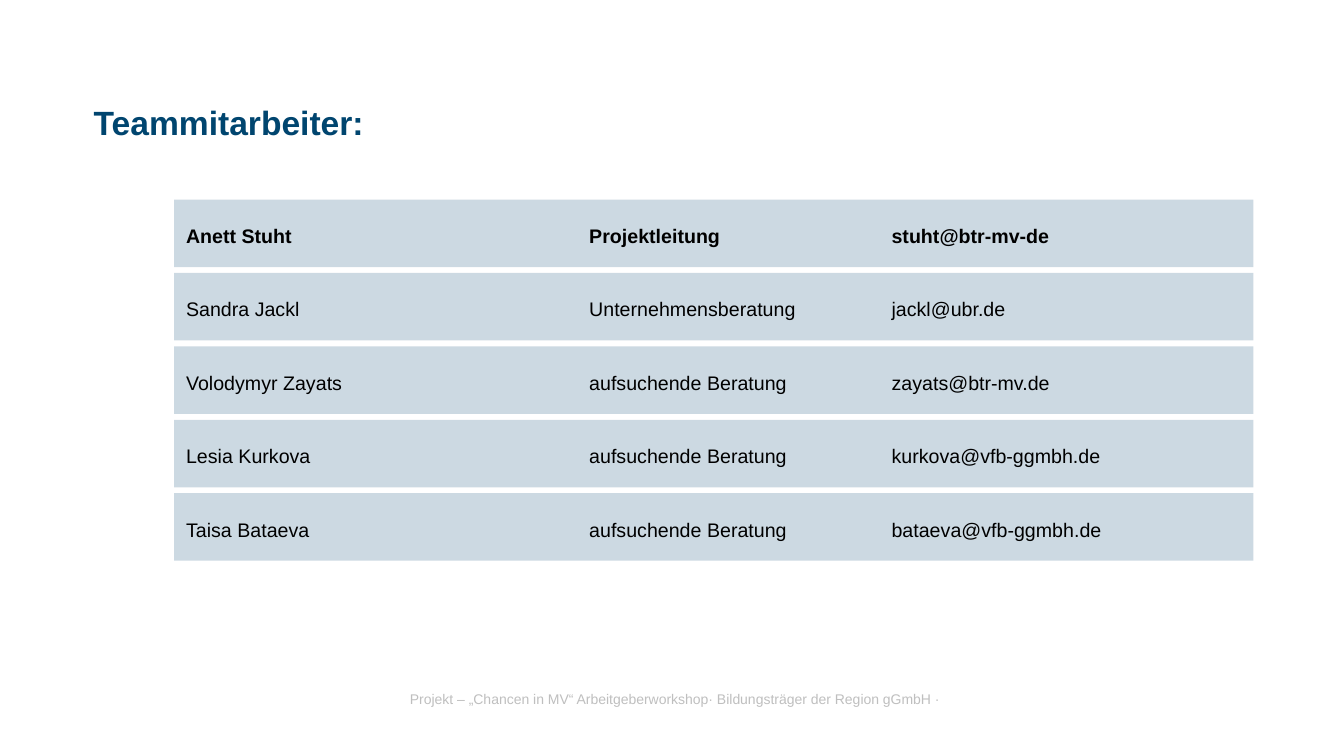
"""Build the team slide: a title, one bar per team member and a footer line."""
from lxml import etree
from pptx import Presentation
from pptx.dml.color import RGBColor
from pptx.enum.shapes import MSO_SHAPE
from pptx.enum.text import MSO_ANCHOR, MSO_AUTO_SIZE, PP_ALIGN
from pptx.oxml.ns import qn
from pptx.util import Cm, Pt

RECTANGLE = MSO_SHAPE.RECTANGLE
TOP, MIDDLE = MSO_ANCHOR.TOP, MSO_ANCHOR.MIDDLE
LEFT, CENTER = PP_ALIGN.LEFT, PP_ALIGN.CENTER
NO_AUTOFIT = MSO_AUTO_SIZE.NONE
TITLE_ONLY = 5

COLORS = {"blue": "00456F", "black": "000000", "grey": "BFBFBF"}
BAR_LEFT, BAR_TOP, BAR_WIDTH, BAR_HEIGHT = Cm(4.39), Cm(5.03), Cm(27.2), Cm(1.7)
BAR_PITCH = Cm(1.85)
COLUMN_STOPS = (Cm(10.16), Cm(17.78))
TEAM = [
    ("Anett Stuht", "Projektleitung", "stuht@btr-mv-de"),
    ("Sandra Jackl", "Unternehmensberatung", "jackl@ubr.de"),
    ("Volodymyr Zayats", "aufsuchende Beratung", "zayats@btr-mv.de"),
    ("Lesia Kurkova", "aufsuchende Beratung", "kurkova@vfb-ggmbh.de"),
    ("Taisa Bataeva", "aufsuchende Beratung", "bataeva@vfb-ggmbh.de"),
]


def set_frame(text_frame, anchor, left, top, right, bottom):
    """Set wrapping, anchor and insets of a text frame."""
    text_frame.word_wrap = True
    text_frame.auto_size = NO_AUTOFIT
    text_frame.vertical_anchor = anchor
    text_frame.margin_left, text_frame.margin_top = left, top
    text_frame.margin_right, text_frame.margin_bottom = right, bottom


def format_paragraph(paragraph, size, color, bold=False, alignment=LEFT, spacing=1.0):
    """Set the font and layout of a paragraph."""
    paragraph.alignment = alignment
    paragraph.line_spacing = spacing
    font = paragraph.font
    font.name, font.size, font.bold = "Arial", Pt(size), bold
    font.color.rgb = RGBColor.from_string(COLORS[color])


def add_tab_stops(paragraph, positions):
    """Add left tab stops to a paragraph."""
    properties = paragraph._p.get_or_add_pPr()
    tab_list = etree.SubElement(properties, qn("a:tabLst"))
    for position in positions:
        etree.SubElement(tab_list, qn("a:tab"), pos=str(position), algn="l")


def add_title(slide, text):
    """Place and format the title placeholder."""
    title = slide.shapes.title
    title.left, title.top, title.width, title.height = Cm(2.36), Cm(2.69), Cm(29.21), Cm(2.34)
    title.text_frame.text = text
    set_frame(title.text_frame, TOP, 0, 0, 0, 0)
    format_paragraph(title.text_frame.paragraphs[0], 24, "blue", bold=True, spacing=0.9)


def add_member_bar(slide, index, member):
    """Add the translucent bar of one team member."""
    bar = slide.shapes.add_shape(
        RECTANGLE, BAR_LEFT, BAR_TOP + index * BAR_PITCH, BAR_WIDTH, BAR_HEIGHT)
    bar.shadow.inherit = False
    bar.line.fill.background()
    bar.fill.solid()
    bar.fill.fore_color.rgb = RGBColor.from_string(COLORS["blue"])
    color = bar._element.spPr.find(qn("a:solidFill"))[0]
    etree.SubElement(color, qn("a:alpha"), val="20000")
    bar.text_frame.text = "\t".join(member)
    set_frame(bar.text_frame, MIDDLE, Cm(0.3), Cm(0.13), Cm(0.25), Cm(0.13))
    paragraph = bar.text_frame.paragraphs[0]
    add_tab_stops(paragraph, COLUMN_STOPS)
    format_paragraph(paragraph, 14, "black", bold=index == 0, spacing=1.2)


def add_footer(slide, text):
    """Add the centred footer line."""
    footer = slide.shapes.add_textbox(Cm(2.41), Cm(17.27), Cm(29.18), Cm(1.02))
    footer.text_frame.text = text
    set_frame(footer.text_frame, TOP, Cm(0.25), Cm(0.13), Cm(0.25), Cm(0.13))
    format_paragraph(footer.text_frame.paragraphs[0], 10, "grey", alignment=CENTER)


def main():
    """Build and save the presentation."""
    presentation = Presentation()
    presentation.slide_width, presentation.slide_height = Cm(33.87), Cm(19.05)
    slide = presentation.slides.add_slide(presentation.slide_layouts[TITLE_ONLY])
    add_title(slide, "Teammitarbeiter:")
    for index, member in enumerate(TEAM):
        add_member_bar(slide, index, member)
    add_footer(slide, "Projekt – „Chancen in MV“ Arbeitgeberworkshop· "
                      "Bildungsträger der Region gGmbH ·")
    presentation.save("out.pptx")


if __name__ == "__main__":
    main()
